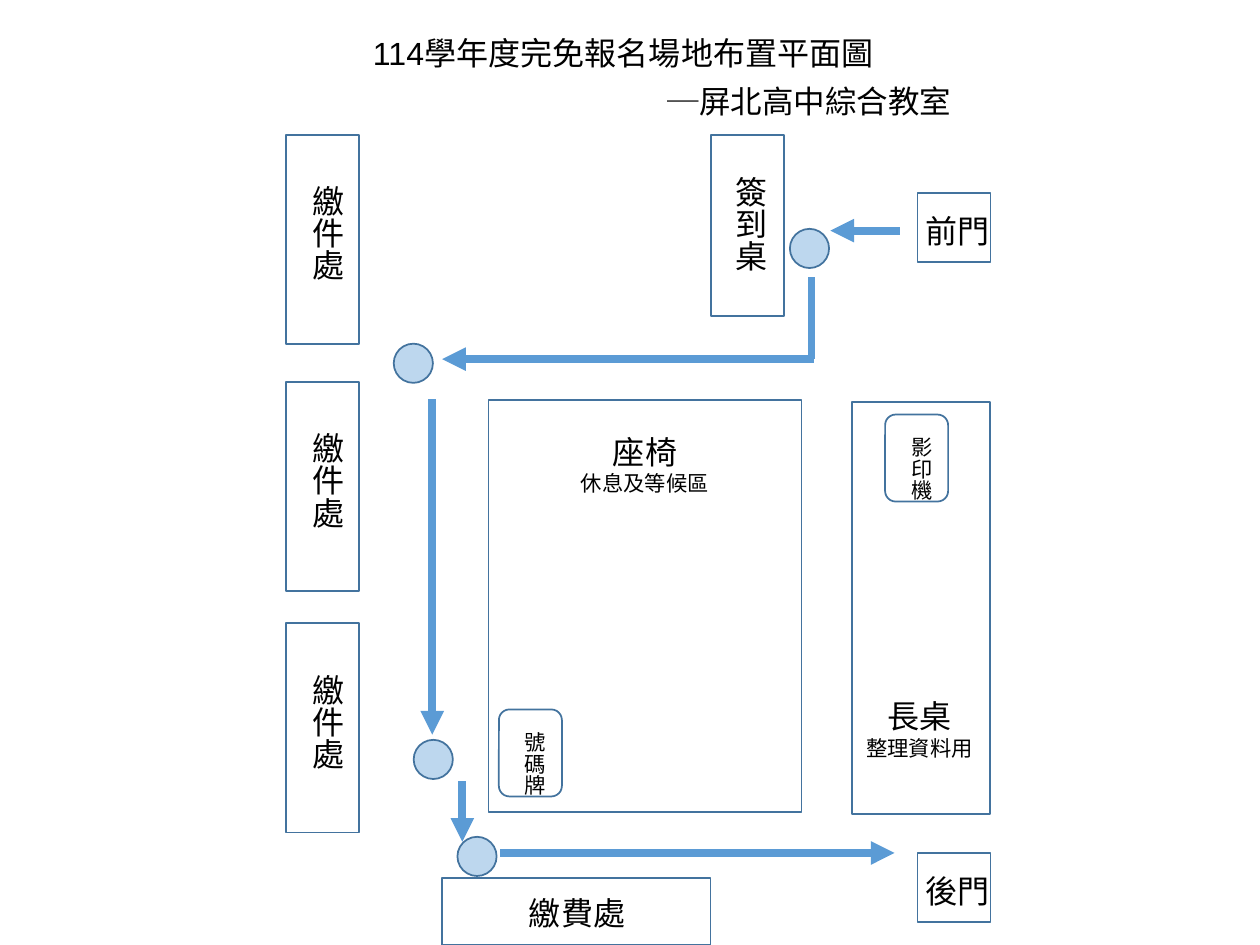
"""Floor plan of the registration room, with the walking route."""
from lxml import etree
from pptx import Presentation
from pptx.dml.color import RGBColor
from pptx.enum.shapes import MSO_CONNECTOR, MSO_SHAPE
from pptx.enum.text import MSO_ANCHOR, PP_ALIGN
from pptx.oxml.ns import qn
from pptx.util import Pt

RECT, ROUND, OVAL = MSO_SHAPE.RECTANGLE, MSO_SHAPE.ROUNDED_RECTANGLE, MSO_SHAPE.OVAL
STRAIGHT, TOP = MSO_CONNECTOR.STRAIGHT, MSO_ANCHOR.TOP
LEFT, CENTER = PP_ALIGN.LEFT, PP_ALIGN.CENTER
OUTLINE, ROUTE, STOP, INK = "43739E", "5B9BD5", "BDD7EE", "000000"
BIG, SMALL = 18.3, 12.2
DOT = 22.4

TITLE = ("114學年度完免報名場地布置平面圖", (205.9, 15.8, 308.9, 29.5))
SUBTITLE = ("─屏北高中綜合教室", (374.4, 43.2, 205.9, 28.8))
DOORS = [("前門", 110.2), ("後門", 487.4)]
DESKS = [("繳件處", 77), ("繳件處", 218.3), ("繳件處", 356.2)]
AREAS = [
    (["長桌", "整理資料用"], (486.7, 229.7, 79.2, 235.4), (486.7, 394.6, 77.8, 43.9)),
    (["座椅", "休息及等候區"], (279.2, 228.5, 178.8, 235.4), (290.9, 243.4, 155.5, 43.9)),
    (["繳費處"], (252.7, 501.8, 153.4, 38.2), (290.9, 506.9, 77.8, 29.5)),
]
SIGN_IN = ("簽到桌", (406.1, 77, 41.8, 103.7), (406.8, 93.6, 36.7, 76.3))
ITEMS = [("號碼牌", 285.1, 405.4), ("影印機", 505.8, 236.9)]
PATHS = [
    (514.1, 131.8, 474.5, 131.8, True),
    (463.7, 158.4, 463.7, 205.2, False),
    (465.1, 205.2, 252.7, 205.2, True),
    (247, 228.2, 247, 419.8, True),
    (264.2, 446.4, 264.2, 481, True),
    (285.8, 487.4, 511.2, 487.4, True),
]
STOPS = [(451.4, 130.8), (225, 196.4), (236.4, 422.8), (261.4, 478.2)]


def color(value):
    return RGBColor.from_string(value)


def add_outline(s, kind, box, fill=None):
    sp = s.shapes.add_shape(kind, *map(Pt, box))
    sp.shadow.inherit = False
    if fill:
        sp.fill.solid()
        sp.fill.fore_color.rgb = color(fill)
    else:
        sp.fill.background()
    sp.line.color.rgb = color(OUTLINE)
    sp.line.width = Pt(1)


def set_text(sp, lines, sizes, align):
    tf = sp.text_frame
    tf.text = "\n".join(lines)
    tf.word_wrap = True
    tf.vertical_anchor = TOP
    for p, size in zip(tf.paragraphs, sizes):
        p.alignment = align
        font = p.runs[0].font
        font.name, font.size = "Arial", Pt(size)
        font.color.rgb = color(INK)


def add_label(s, lines, box, align=CENTER, sizes=(BIG, SMALL), vertical=False):
    sp = s.shapes.add_textbox(*map(Pt, box))
    set_text(sp, lines, sizes, align)
    if vertical:
        sp.text_frame._txBody.bodyPr.set("vert", "eaVert")


def add_path(s, x1, y1, x2, y2, arrow):
    line = s.shapes.add_connector(STRAIGHT, Pt(x1), Pt(y1), Pt(x2), Pt(y2))
    line.line.color.rgb = color(ROUTE)
    line.line.width = Pt(4.5)
    if arrow:
        etree.SubElement(line.line._get_or_add_ln(), qn("a:tailEnd"), type="triangle")
    etree.SubElement(line._element.spPr, qn("a:effectLst"))


def main():
    prs = Presentation()
    prs.slide_width, prs.slide_height = Pt(720), Pt(540)
    s = prs.slides.add_slide(prs.slide_layouts[5])

    title = s.shapes.title
    text, box = TITLE
    title.left, title.top, title.width, title.height = map(Pt, box)
    set_text(title, [text], [BIG], LEFT)
    text, box = SUBTITLE
    add_label(s, [text], box, LEFT, [18])

    for text, y in DOORS:
        add_outline(s, RECT, (524.2, y, 41.8, 39.6))
        add_label(s, [text], (522, y + 7.2, 56.9, 29.5), LEFT)
    for lines, box, label_box in AREAS:
        add_outline(s, RECT, box)
        add_label(s, lines, label_box)

    tables = [SIGN_IN] + [
        (text, (163.4, y, 41.8, 119.5), (164.9, y + 21.9, 36.7, 76.3)) for text, y in DESKS
    ]
    for text, box, label_box in tables:
        add_outline(s, RECT, box)
        add_label(s, [text], label_box, vertical=True)
    for text, x, y in ITEMS:
        add_outline(s, ROUND, (x, y, 36, 49.7))
        add_label(s, [text], (x + 1.8, y + 5.8, 29.5, 60.5), LEFT, [SMALL], True)

    for path in PATHS:
        add_path(s, *path)
    for x, y in STOPS:
        add_outline(s, OVAL, (x, y, DOT, DOT), STOP)
    prs.save("out.pptx")


if __name__ == "__main__":
    main()
